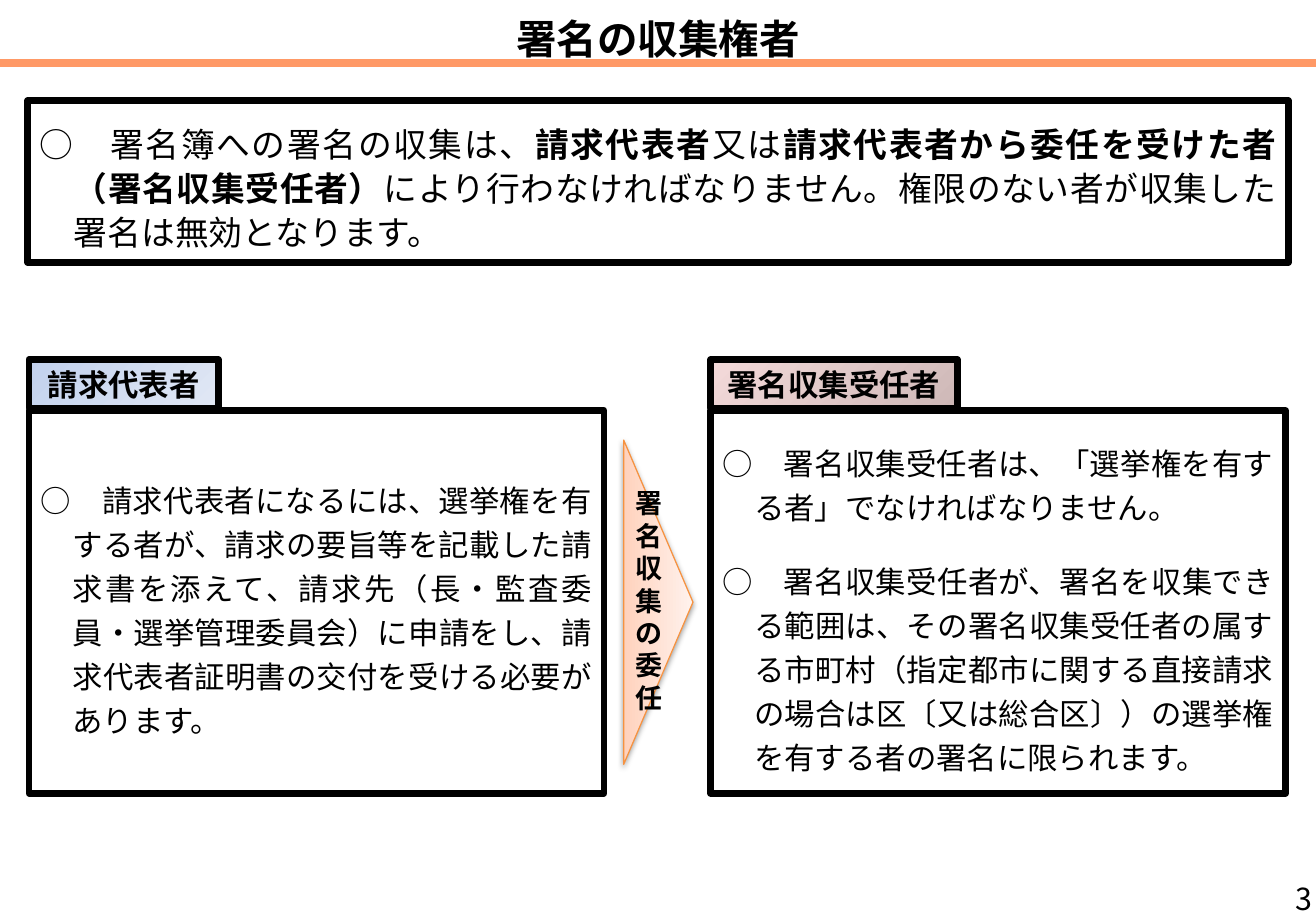
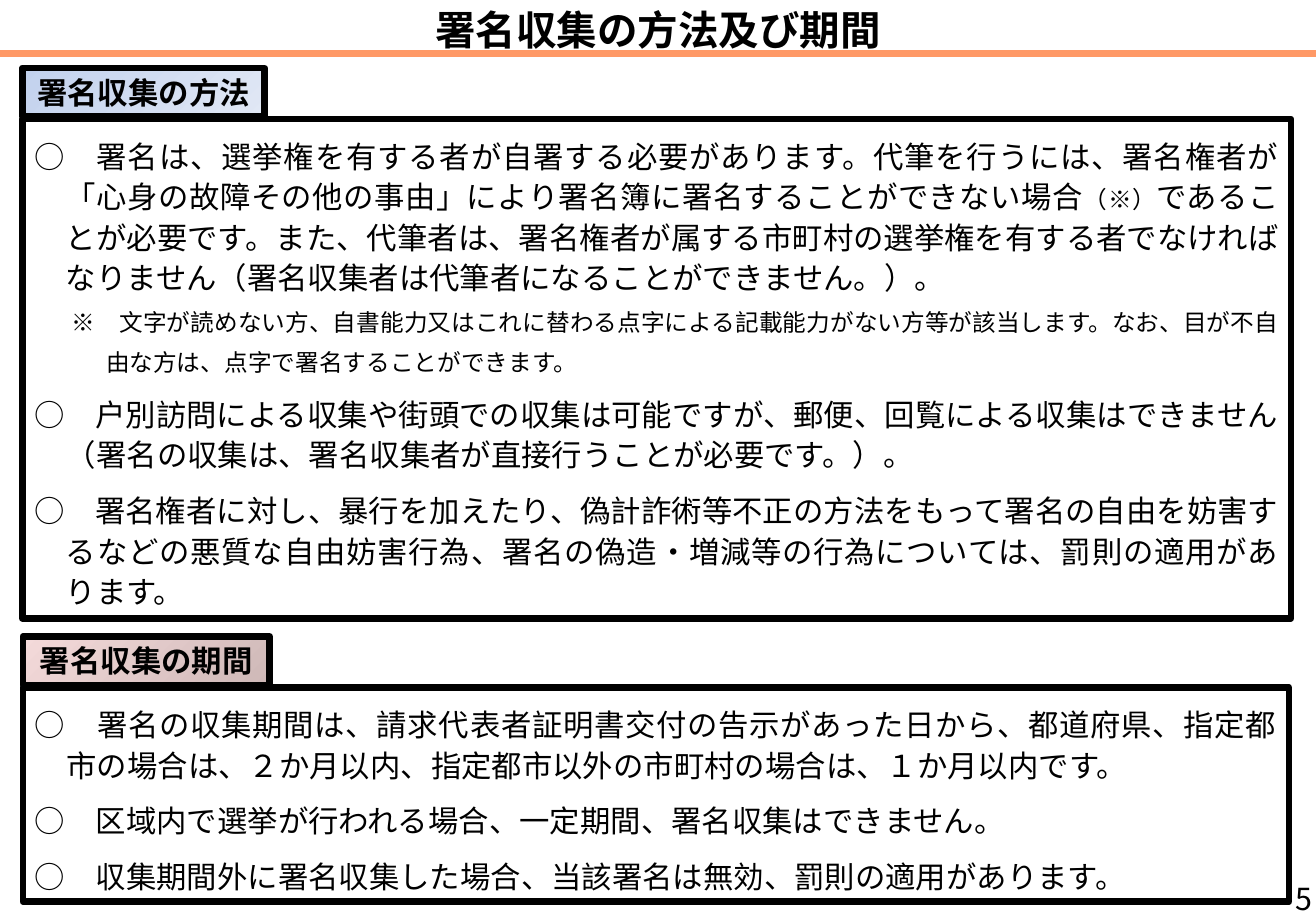
import pptx
import pptx.util
import pptx.dml.color
import pptx.enum.shapes
import pptx.enum.text
import pptx.oxml
import pptx.oxml.ns
import lxml.etree

FONT = "Noto Sans CJK JP"
BLACK, WHITE, ORANGE = "000000", "FFFFFF", "FF9966"
BLUE_FADE, PINK_FADE = ("C2D1ED", "E1E8F5"), ("F4DADA", "CEB8B7")
PEACH_FADE, PEACH_EDGE = ("FFD2BD", "FFF2ED"), "F69240"
LABEL_HEIGHT, LABEL_RISE = 5.33, 5.6
ALIGN = pptx.enum.text.PP_ALIGN
ANCHOR = pptx.enum.text.MSO_ANCHOR
SHAPE = pptx.enum.shapes.MSO_SHAPE

presentation = pptx.Presentation()
presentation.slide_width = pptx.util.Inches(10.83)
presentation.slide_height = pptx.util.Inches(7.5)
column = presentation.slide_width / 100
row = presentation.slide_height / 100


def paint(target, *colors, angle=315):
    if len(colors) == 1:
        target.solid()
        target.fore_color.rgb = pptx.dml.color.RGBColor.from_string(colors[0])
        return
    target.gradient()
    target.gradient_angle = angle
    for stop, color, position in zip(target.gradient_stops, colors, (0, 1)):
        stop.color.rgb = pptx.dml.color.RGBColor.from_string(color)
        stop.position = position


def add_text(slide, paragraphs, area, size=18, bold=False, align=ALIGN.CENTER,
             anchor=ANCHOR.MIDDLE, insets=(0.1, 0.05, 0.1, 0.05), fill=(),
             framed=False, hang=0, spacing=None, after=0):
    left, top, width, height = area
    place = [int(left * column), int(top * row), int(width * column), int(height * row)]
    if framed:
        shape = slide.shapes.add_shape(SHAPE.RECTANGLE, *place)
        shape.shadow.inherit = False
        paint(shape.fill, *fill)
        paint(shape.line.fill, BLACK)
        shape.line.width = pptx.util.Pt(4)
    else:
        shape = slide.shapes.add_textbox(*place)
    frame = shape.text_frame
    frame.word_wrap = True
    frame.vertical_anchor = anchor
    frame.margin_left, frame.margin_top, frame.margin_right, frame.margin_bottom = map(
        pptx.util.Inches, insets)
    for index, content in enumerate(paragraphs):
        paragraph = frame.paragraphs[0] if index == 0 else frame.add_paragraph()
        paragraph.alignment = align
        paragraph.space_after = pptx.util.Pt(content.get("after", after))
        if spacing:
            paragraph.line_spacing = pptx.util.Pt(spacing)
        if hang:
            properties = paragraph._p.get_or_add_pPr()
            properties.set("marL", str(pptx.util.Inches(content.get("indent", hang))))
            properties.set("indent", str(-pptx.util.Inches(content.get("hang", hang))))
        for words, *changes in content["runs"]:
            changed = changes[0] if changes else {}
            run = paragraph.add_run()
            run.text = words
            run.font.name = FONT
            run.font.size = pptx.util.Pt(changed.get("size", size))
            run.font.bold = changed.get("bold", bold)
            paint(run.font.fill, BLACK)
            east_asian = lxml.etree.SubElement(
                run._r.get_or_add_rPr(), pptx.oxml.ns.qn("a:ea"))
            east_asian.set("typeface", FONT)


claimant = [
    {"runs": [("○　請求代表者になるには、選挙権を有する者が、請求の要旨等を記載した請求書を添えて、請求先（長・監査委員・選挙管理委員会）に申請をし、請求代表者証明書の交付を受ける必要があります。",)]},
]
collector = [
    {"runs": [("○　署名収集受任者は、「選挙権を有する者」でなければなりません。",)], "after": 18},
    {"runs": [("○　署名収集受任者が、署名を収集できる範囲は、その署名収集受任者の属する市町村（指定都市に関する直接請求の場合は区〔又は総合区〕）の選挙権を有する者の署名に限られます。",)]},
]
method = [
    {"runs": [
        ("○　署名は、選挙権を有する者が自署する必要があります。代筆を行うには、署名権者が「心身の故障その他の事由」により署名簿に署名することができない場合",),
        ("（※）", {"size": 14}),
        ("であることが必要です。また、代筆者は、署名権者が属する市町村の選挙権を有する者でなければなりません（署名収集者は代筆者になることができません。）。",),
    ], "after": 0},
    {"runs": [("※　文字が読めない方、自書能力又はこれに替わる点字による記載能力がない方等が該当します。なお、目が不自由な方は、点字で署名することができます。", {"size": 14})],
     "indent": 0.59, "hang": 0.28},
    {"runs": [("○　戸別訪問による収集や街頭での収集は可能ですが、郵便、回覧による収集はできません（署名の収集は、署名収集者が直接行うことが必要です。）。",)]},
    {"runs": [("○　署名権者に対し、暴行を加えたり、偽計詐術等不正の方法をもって署名の自由を妨害するなどの悪質な自由妨害行為、署名の偽造・増減等の行為については、罰則の適用があります。",)]},
]
period = [
    {"runs": [("○　署名の収集期間は、請求代表者証明書交付の告示があった日から、都道府県、指定都市の場合は、２か月以内、指定都市以外の市町村の場合は、１か月以内です。",)]},
    {"runs": [("○　区域内で選挙が行われる場合、一定期間、署名収集はできません。",)]},
    {"runs": [("○　収集期間外に署名収集した場合、当該署名は無効、罰則の適用があります。",)]},
]

roomy = {"align": ALIGN.JUSTIFY, "insets": (0.1, 0.16, 0.1, 0.08), "spacing": 26,
         "hang": 0.26, "framed": True, "fill": (WHITE,)}
dense = {**roomy, "anchor": ANCHOR.TOP, "insets": (0.1, 0.12, 0.1, 0.04),
         "spacing": 24, "after": 9}

pages = [
    {"title": "署名の収集権者", "rule_top": 6.93, "number": "3",
     "body": roomy, "panels": [
         ("請求代表者", 14.4, BLUE_FADE, claimant, (2.2, 45.07, 43.7, 42)),
         ("署名収集受任者", 18.74, PINK_FADE, collector, (54, 45.07, 43.7, 42))]},
    {"title": "署名収集の方法及び期間", "rule_top": 5.87, "number": "5",
     "body": dense, "panels": [
         ("署名収集の方法", 18.4, BLUE_FADE, method, (1.7, 13.07, 96.4, 54.8)),
         ("署名収集の期間", 18.74, PINK_FADE, period, (1.75, 75.47, 96.2, 23.5))]},
]

for page in pages:
    slide = presentation.slides.add_slide(presentation.slide_layouts[6])
    rule_top = int(page["rule_top"] * row)
    rule = slide.shapes.add_connector(
        pptx.enum.shapes.MSO_CONNECTOR.STRAIGHT, 0, rule_top,
        presentation.slide_width, rule_top)
    paint(rule.line.fill, ORANGE)
    rule.line.width = pptx.util.Pt(4.5)
    lxml.etree.SubElement(rule._element.spPr, pptx.oxml.ns.qn("a:effectLst"))
    add_text(slide, [{"runs": [(page["title"],)]}], (0, 0, 100, page["rule_top"]),
             size=24, bold=True, anchor=ANCHOR.BOTTOM, insets=(0, 0, 0, 0), spacing=28)
    for label, label_width, fade, paragraphs, area in page["panels"]:
        add_text(slide, paragraphs, area, **page["body"])
        add_text(slide, [{"runs": [(label,)]}],
                 (area[0], area[1] - LABEL_RISE, label_width, LABEL_HEIGHT),
                 bold=True, framed=True, fill=fade)
    add_text(slide, [{"runs": [(page["number"],)]}], (96.5, 96, 3.5, 4),
             align=ALIGN.RIGHT, anchor=ANCHOR.TOP, insets=(0, 0.05, 0.03, 0))

slide = presentation.slides[0]
summary = [{"runs": [
    ("○　署名簿への署名の収集は、",),
    ("請求代表者", {"bold": True}),
    ("又は",),
    ("請求代表者から委任を受けた者（署名収集受任者）", {"bold": True}),
    ("により行わなければなりません。権限のない者が収集した署名は無効となります。",),
]}]
add_text(slide, summary, (2.1, 11.07, 95.8, 17.73), **{**roomy, "size": 20, "hang": 0.28})

arrow = slide.shapes.add_shape(
    SHAPE.ISOSCELES_TRIANGLE, int(37.7 * column), int(62.3 * row),
    int(24.65 * column), int(7.6 * row))
arrow.rotation = 90
paint(arrow.fill, *PEACH_FADE, angle=90)
paint(arrow.line.fill, PEACH_EDGE)
arrow.line.width = pptx.util.Pt(0.75)
arrow.shadow.inherit = False
effects = arrow._element.spPr.find(pptx.oxml.ns.qn("a:effectLst"))
effects.append(pptx.oxml.parse_xml(
    f'<a:outerShdw {pptx.oxml.ns.nsdecls("a")} blurRad="40000" dist="20000" dir="5400000" '
    f'rotWithShape="0"><a:srgbClr val="{BLACK}"><a:alpha val="38000"/></a:srgbClr></a:outerShdw>'))
add_text(slide, [{"runs": [("署名収集の委任",)]}], (47.4, 52.8, 3.5, 26.5),
         size=16, bold=True, align=ALIGN.LEFT, anchor=ANCHOR.TOP)

presentation.save("out.pptx")
